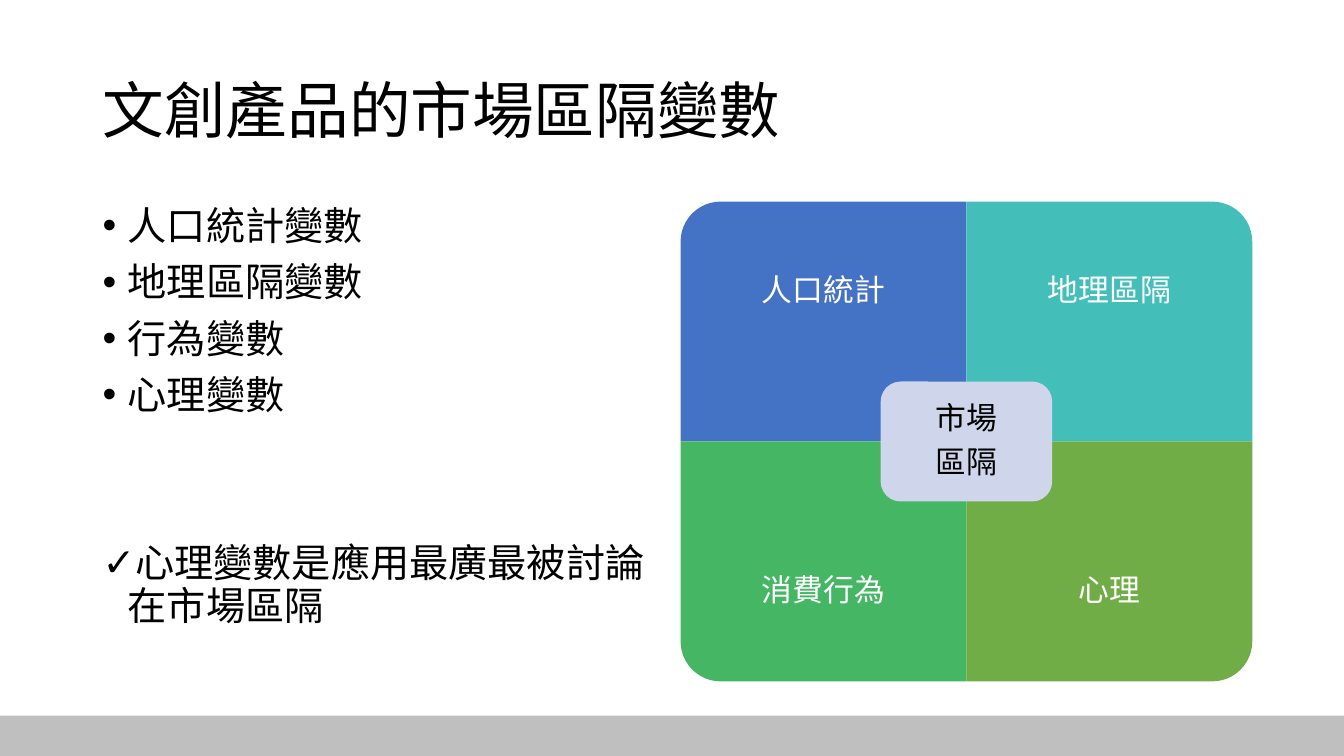
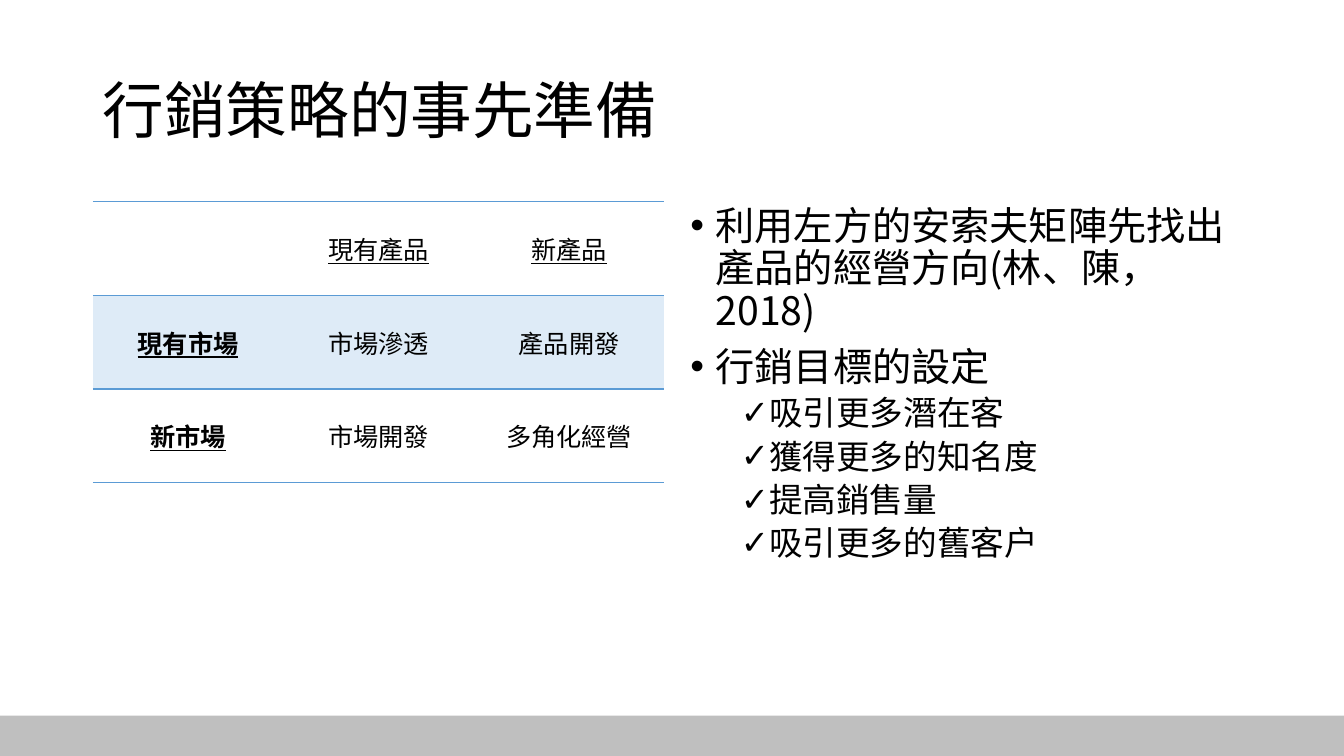
"""Build two slides on market segmentation and marketing preparation."""
from dataclasses import dataclass

from lxml import etree
from pptx import Presentation
from pptx import util as u
from pptx.dml.color import RGBColor
from pptx.enum import shapes, text
from pptx.oxml import ns


@dataclass(frozen=True)
class Theme:
    """Colours, fonts and type sizes."""
    ink: str = "000000"
    paper: str = "FFFFFF"
    band: str = "BFBFBF"
    rule: str = "5B9BD5"
    tint: str = "DEEBF7"
    hub: str = "CFD5EA"
    quadrants: tuple = ("4472C4", "43BEB9", "45B664", "70AD47")
    cjk: str = "Noto Sans CJK TC"
    latin: str = "Calibri"
    title: int = 44
    bullet: int = 28
    sub_bullet: int = 24
    diagram: int = 22
    table: int = 18


@dataclass(frozen=True)
class Grid:
    """Slide size and a two-column grid, in inches."""
    width: float = 13.33
    height: float = 7.5
    left: float = 0.92
    column: float = 5.67
    gutter: float = 0.16
    top: float = 2
    depth: float = 4.76
    band: float = 0.4

    def column_left(self, index):
        """Return the left edge of a column."""
        return self.left + index * (self.column + self.gutter)


THEME = Theme()
GRID = Grid()
RULE_WIDTH = 1
NO_STYLE = "{2D5ABB26-0587-4C30-8999-92F81FD0307C}"


def inches(*lengths):
    """Convert lengths in inches to slide units."""
    return [u.Inches(length) for length in lengths]


def style(paragraph, size, color=THEME.ink, font=THEME.latin, bold=None, underline=None):
    """Set the font of a whole paragraph."""
    face = paragraph.font
    face.size, face.bold, face.underline = u.Pt(size), bold, underline
    face.color.rgb = RGBColor.from_string(color)
    face.name = font
    defaults = paragraph._p.pPr.find(ns.qn("a:defRPr"))
    etree.SubElement(defaults, ns.qn("a:ea"), typeface=THEME.cjk)


def set_insets(target, inset):
    """Give a text frame or a cell the same inset on all sides."""
    target.margin_left = target.margin_right = u.Inches(inset)
    target.margin_top = target.margin_bottom = u.Inches(inset)


def add_block(slide, preset, box, color, rotation=0):
    """Add a plain filled shape."""
    block = slide.shapes.add_shape(preset, *inches(*box))
    block.shadow.inherit = False
    block.fill.solid()
    block.fill.fore_color.rgb = RGBColor.from_string(color)
    block.line.fill.background()
    block.rotation = rotation
    return block


def add_text_frame(slide, box, anchor=text.MSO_ANCHOR.TOP):
    """Add a wrapping text box and return its frame."""
    frame = slide.shapes.add_textbox(*inches(*box)).text_frame
    frame.word_wrap = True
    frame.vertical_anchor = anchor
    return frame


def fill_paragraphs(frame, lines):
    """Write the lines and yield each paragraph with its index."""
    for index, line in enumerate(lines):
        paragraph = frame.add_paragraph() if index else frame.paragraphs[0]
        paragraph.text = line
        paragraph.line_spacing = 0.9
        yield index, paragraph


def add_label(frame, lines, color, inset):
    """Write centred diagram text into a frame."""
    set_insets(frame, inset)
    frame.word_wrap = True
    frame.vertical_anchor = text.MSO_ANCHOR.MIDDLE
    for _, paragraph in fill_paragraphs(frame, lines):
        paragraph.alignment = text.PP_ALIGN.CENTER
        paragraph.space_after = u.Pt(0.35 * THEME.diagram)
        style(paragraph, THEME.diagram, color)


def add_bullets(slide, column, items):
    """Add a bullet list from (text, mark, level, space before) items."""
    frame = add_text_frame(slide, (GRID.column_left(column), GRID.top, GRID.column, GRID.depth))
    for index, paragraph in fill_paragraphs(frame, [item[0] for item in items]):
        _, mark, level, space = items[index]
        paragraph.level = level
        properties = paragraph._p.get_or_add_pPr()
        properties.set("marL", str(u.Inches(0.25 + 0.5 * level)))
        properties.set("indent", str(u.Inches(-0.25)))
        etree.SubElement(properties, ns.qn("a:buFont"), typeface="Arial")
        etree.SubElement(properties, ns.qn("a:buChar"), char=mark)
        paragraph.space_before = u.Pt(space if index else 0)
        style(paragraph, THEME.sub_bullet if level else THEME.bullet, font=THEME.cjk)


def add_quadrants(slide, column, names, hub_lines):
    """Add a two-by-two matrix with a hub in its middle."""
    left, width, height = GRID.column_left(column), GRID.column / 2, GRID.depth / 2
    label_height = 0.75 * height
    for index, (name, color, turn) in enumerate(zip(names, THEME.quadrants, (270, 0, 180, 90))):
        row, col = divmod(index, 2)
        x, y = left + col * width, GRID.top + row * height
        w, h = (height, width) if turn % 180 else (width, height)
        box = (x + (width - w) / 2, y + (height - h) / 2, w, h)
        add_block(slide, shapes.MSO_SHAPE.ROUND_1_RECTANGLE, box, color, turn)
        label_top = y + row * (height - label_height)
        label = add_text_frame(slide, (x, label_top, width, label_height))
        add_label(label, [name], THEME.paper, 0.17)
    hub_width, hub_height = 0.6 * width, 0.5 * height
    hub_box = (left + width - hub_width / 2, GRID.top + height - hub_height / 2,
               hub_width, hub_height)
    hub = add_block(slide, shapes.MSO_SHAPE.ROUNDED_RECTANGLE, hub_box, THEME.hub)
    add_label(hub.text_frame, hub_lines, THEME.ink, 0.09)


def add_border(cell, side):
    """Draw a rule on one side of a cell."""
    properties = cell._tc.get_or_add_tcPr()
    line = etree.Element(ns.qn(f"a:{side}"), w=str(u.Pt(RULE_WIDTH)))
    fill = etree.SubElement(line, ns.qn("a:solidFill"))
    etree.SubElement(fill, ns.qn("a:srgbClr"), val=THEME.rule)
    borders = [child for child in properties if child.tag.startswith(ns.qn("a:ln"))]
    properties.insert(len(borders), line)


def add_matrix(slide, column, rows):
    """Add a ruled table with a header row and a header column."""
    row_height = 0.93
    frame = slide.shapes.add_table(len(rows), len(rows[0]), *inches(
        GRID.column_left(column), GRID.top, GRID.column, row_height * len(rows)))
    matrix = frame.table
    matrix._tbl.tblPr.find(ns.qn("a:tableStyleId")).text = NO_STYLE
    matrix.horz_banding = False
    for r, row in enumerate(rows):
        for c, words in enumerate(row):
            cell = matrix.cell(r, c)
            set_insets(cell, 0.05)
            cell.vertical_anchor = text.MSO_ANCHOR.MIDDLE
            if r == 1:
                cell.fill.solid()
                cell.fill.fore_color.rgb = RGBColor.from_string(THEME.tint)
            else:
                cell.fill.background()
            if r == 0:
                add_border(cell, "lnT")
            if r in (0, len(rows) - 1):
                add_border(cell, "lnB")
            if r == 1:
                add_border(cell, "lnT")
            paragraph = cell.text_frame.paragraphs[0]
            paragraph.text = words
            paragraph.alignment = text.PP_ALIGN.CENTER
            style(paragraph, THEME.table, bold=c == 0, underline=r == 0 or c == 0)


def add_slide(deck, heading):
    """Add a slide with the footer band and a title."""
    slide = deck.slides.add_slide(deck.slide_layouts[6])
    add_block(slide, shapes.MSO_SHAPE.RECTANGLE,
              (0, GRID.height - GRID.band, GRID.width, GRID.band), THEME.band)
    frame = add_text_frame(slide, (GRID.left, 0.4, 2 * GRID.column + GRID.gutter, 1.45),
                           text.MSO_ANCHOR.MIDDLE)
    for _, paragraph in fill_paragraphs(frame, [heading]):
        style(paragraph, THEME.title, font=THEME.cjk)
    return slide


def main():
    """Build and save the deck."""
    deck = Presentation()
    deck.slide_width, deck.slide_height = inches(GRID.width, GRID.height)

    segmentation = add_slide(deck, "文創產品的市場區隔變數")
    variables = ("人口統計變數", "地理區隔變數", "行為變數", "心理變數")
    add_bullets(segmentation, 0, [(name, "•", 0, 10) for name in variables]
                + [("心理變數是應用最廣最被討論在市場區隔", "✓", 0, 90)])
    add_quadrants(segmentation, 1, ("人口統計", "地理區隔", "消費行為", "心理"),
                  ("市場", "區隔"))

    preparation = add_slide(deck, "行銷策略的事先準備")
    add_matrix(preparation, 0, (("", "現有產品", "新產品"),
                                ("現有市場", "市場滲透", "產品開發"),
                                ("新市場", "市場開發", "多角化經營")))
    steps = ("利用左方的安索夫矩陣先找出產品的經營方向(林、陳，2018)", "行銷目標的設定")
    goals = ("吸引更多潛在客", "獲得更多的知名度", "提高銷售量", "吸引更多的舊客戶")
    add_bullets(preparation, 1, [(step, "•", 0, 10) for step in steps]
                + [(goal, "✓", 1, 5) for goal in goals])

    deck.save("out.pptx")


if __name__ == "__main__":
    main()
